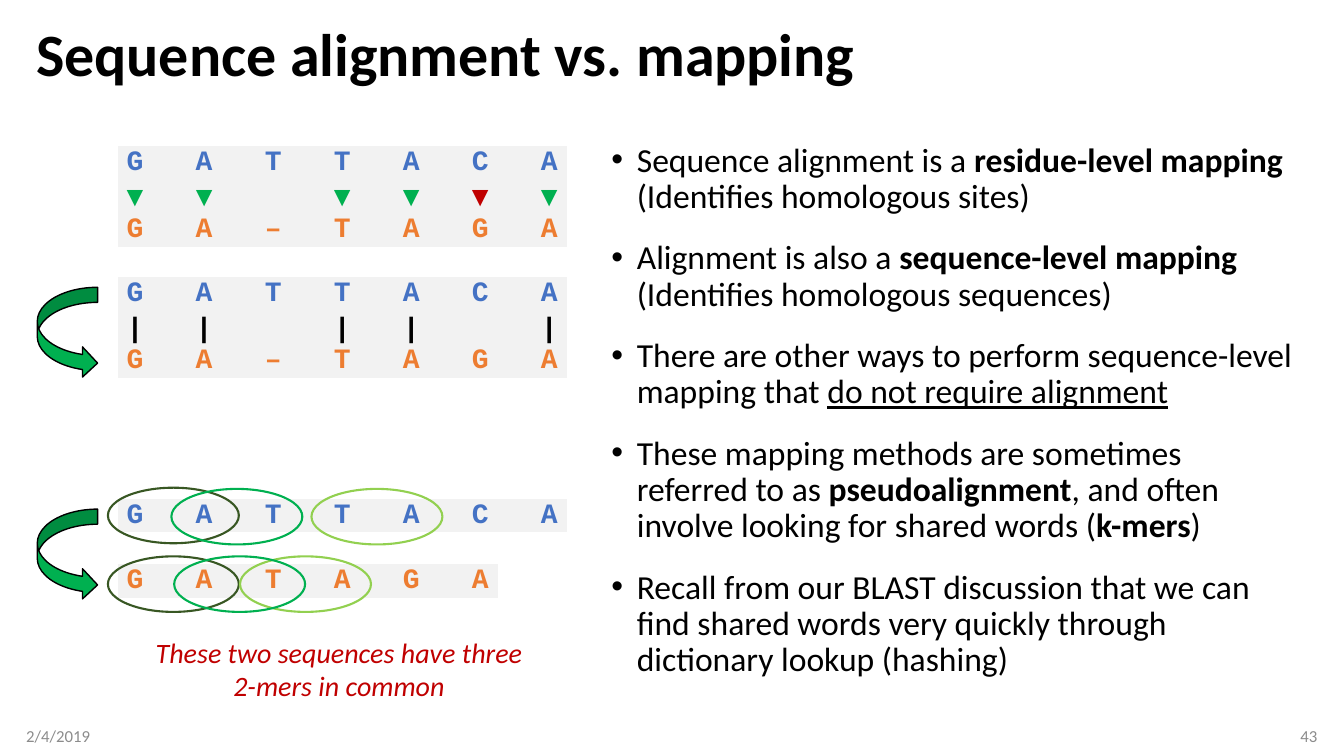
from pptx import Presentation
from pptx.dml.color import RGBColor
from pptx.enum.shapes import MSO_SHAPE as Preset
from pptx.enum.text import MSO_ANCHOR as Anchor, PP_ALIGN as Align
from pptx.oxml import parse_xml
from pptx.oxml.ns import nsdecls, qn
from pptx.util import Cm, Pt

BLUE, ORANGE, GREEN, RED = "4472C4", "ED7D31", "00B050", "C00000"
BLACK, WHITE, GRAY, PALE = "000000", "FFFFFF", "8C8C8C", "F2F2F2"
NO_GRID = "{2D5ABB26-0587-4C30-8999-92F81FD0307C}"


def color(value):
    return RGBColor.from_string(value)


def add_text(box, text, size, hue, align=Align.LEFT, anchor=Anchor.TOP):
    shape = slide.shapes.add_textbox(*(Cm(length) for length in box))
    frame = shape.text_frame
    frame.word_wrap = True
    frame.vertical_anchor = anchor
    frame.text = text
    paragraph = frame.paragraphs[0]
    paragraph.alignment = align
    font = paragraph.font
    for run in paragraph.runs:
        font = run.font
        font.name, font.size = "Calibri", Pt(size)
        font.color.rgb = color(hue)
    return frame, paragraph, font


presentation = Presentation()
presentation.slide_width, presentation.slide_height = Cm(33.87), Cm(19.05)
slide = presentation.slides.add_slide(presentation.slide_layouts[6])

date_frame, _, _ = add_text((0.66, 18.03, 7.62, 1.02), "2/4/2019", 12, GRAY, anchor=Anchor.MIDDLE)
date_frame.margin_left = 0
number_frame, _, _ = add_text((25.58, 18.03, 7.62, 1.02), "43", 12, GRAY, Align.RIGHT, Anchor.MIDDLE)
number_frame.margin_right = 0

_, title, title_font = add_text((0.66, 0.64, 32.54, 1.83), "Sequence alignment vs. mapping", 42.9, BLACK)
title.line_spacing = 0.8
title_font.bold = True

points = [
    [("Sequence alignment is a ", ""), ("residue-level mapping", "bold"), ("\n", ""),
     ("(Identifies homologous sites)", "")],
    [("Alignment is also a ", ""), ("sequence-level mapping", "bold"), ("\n", ""),
     ("(Identifies homologous sequences)", "")],
    [("There are other ways to perform sequence-level mapping that ", ""),
     ("do not require alignment", "underline")],
    [("These mapping methods are sometimes referred to as ", ""), ("pseudoalignment", "bold"),
     (", and often involve looking for shared words (", ""), ("k-mers", "bold"), (")", "")],
    [("Recall from our BLAST discussion that we can find shared words very quickly "
      "through dictionary lookup (hashing)", "")],
]
body, paragraph, _ = add_text((15.16, 3.48, 17.78, 13.92), "", 24, BLACK)
for index, point in enumerate(points):
    if index:
        paragraph = body.add_paragraph()
    paragraph.line_spacing = 0.9
    paragraph.space_before = Pt(18)
    properties = paragraph._p.get_or_add_pPr()
    properties.set("marL", str(Cm(0.64)))
    properties.set("indent", str(-Cm(0.64)))
    properties.append(parse_xml(f'<a:buFont {nsdecls("a")} typeface="Arial"/>'))
    properties.append(parse_xml(f'<a:buChar {nsdecls("a")} char="•"/>'))
    for text, style in point:
        if text == "\n":
            paragraph.add_line_break()
            continue
        run = paragraph.add_run()
        run.text = text
        run.font.name, run.font.size = "Calibri", Pt(24)
        run.font.color.rgb = color(BLACK)
        run.font.bold = style == "bold"
        run.font.underline = style == "underline"

alignments = [
    (3.68, ("GATTACA", "▼▼ ▼▼▼▼", "GA–TAGA"), GREEN),
    (6.99, ("GATTACA", "|| || |", "GA–TAGA"), BLACK),
    (12.57, ("GATTACA", "", "GATAGA"), BLACK),
]
for top, lines, mark_color in alignments:
    frame = slide.shapes.add_table(3, 13, Cm(2.97), Cm(top), Cm(11.31), Cm(2.4))
    table = frame.table
    table.first_row = table.horz_banding = False
    next(frame.element.iter(qn("a:tableStyleId"))).text = NO_GRID
    for column in table.columns:
        column.width = Cm(0.87)
    for row, (line, hue) in enumerate(zip(lines, (BLUE, mark_color, ORANGE))):
        table.rows[row].height = Cm(0.8)
        for column in range(13):
            cell = table.cell(row, column)
            cell.margin_left = cell.margin_right = cell.margin_top = cell.margin_bottom = 0
            cell.vertical_anchor = Anchor.MIDDLE
            cell.fill.solid()
            cell.fill.fore_color.rgb = color(PALE if column < 2 * len(line) - 1 else WHITE)
            position, is_gap = divmod(column, 2)
            symbol = line[position:position + 1].strip()
            if is_gap or not symbol:
                continue
            cell.text = symbol
            paragraph = cell.text_frame.paragraphs[0]
            paragraph.alignment = Align.CENTER
            font = paragraph.runs[0].font
            font.name = "Arial" if row == 1 else "Courier New"
            font.size, font.bold = Pt(20), True
            mismatch = row == 1 and lines[0][position] != lines[2][position]
            font.color.rgb = color(RED if mismatch else hue)

shared_words = [
    (2.72, 12.29, "385723"), (2.72, 14.02, "385723"),
    (6.05, 14.02, "92D050"), (7.85, 12.32, "92D050"),
    (4.32, 12.32, GREEN), (4.39, 14.02, GREEN),
]
for left, top, hue in shared_words:
    ellipse = slide.shapes.add_shape(Preset.OVAL, Cm(left), Cm(top), Cm(3.3), Cm(1.4))
    ellipse.shadow.inherit = False
    ellipse.fill.background()
    ellipse.line.color.rgb = color(hue)
    ellipse.line.width = Pt(1.5)

for top in (7.24, 12.83):
    arrow = slide.shapes.add_shape(Preset.CURVED_RIGHT_ARROW, Cm(0.94), Cm(top), Cm(1.52), Cm(2.29))
    arrow.shadow.inherit = False
    arrow.fill.solid()
    arrow.fill.fore_color.rgb = color(GREEN)
    arrow.line.color.rgb = color(BLACK)
    arrow.line.width = Pt(1)

_, _, caption_font = add_text((3.48, 15.88, 10.13, 1.96),
                              "These two sequences have three 2-mers in common", 20, RED, Align.CENTER)
caption_font.italic = True

presentation.save("out.pptx")
